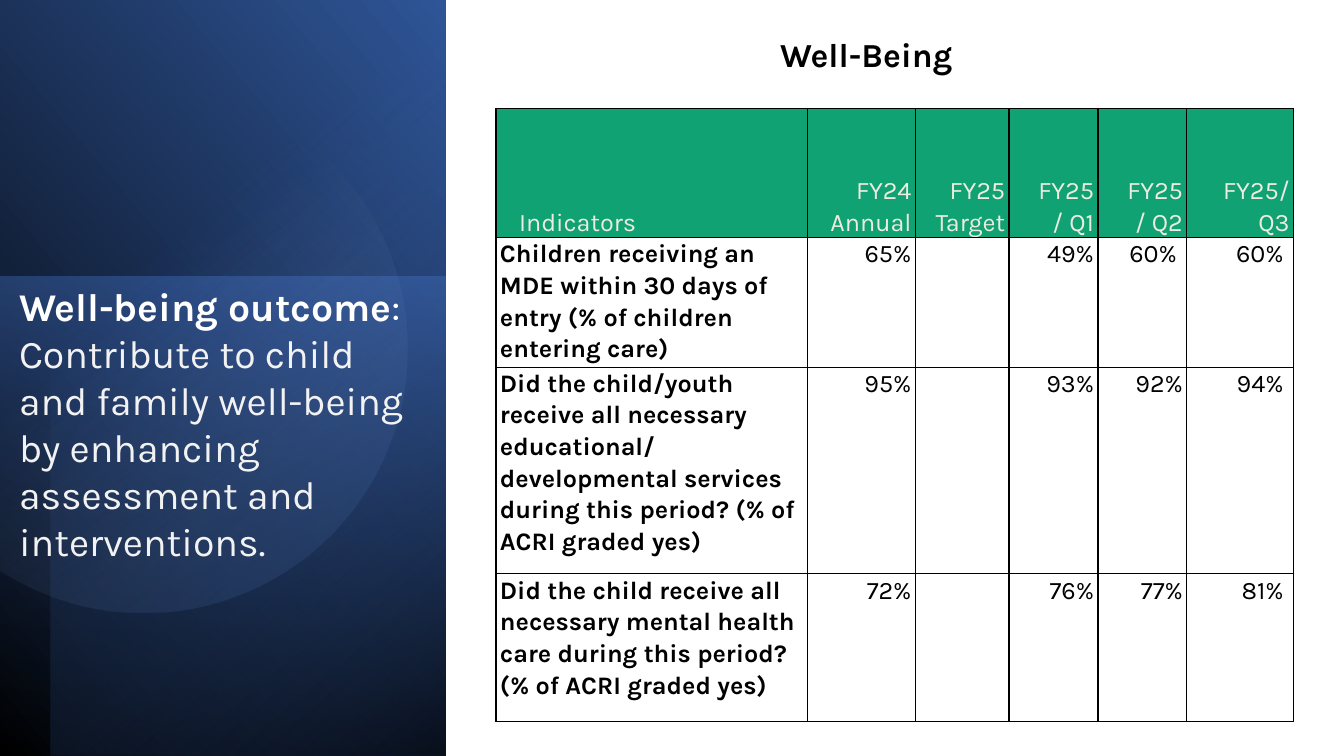
import math

import lxml.etree
import pptx
import pptx.dml.color
import pptx.enum.shapes
import pptx.enum.text
import pptx.oxml
import pptx.oxml.ns
import pptx.util

Cm = pptx.util.Cm
Pt = pptx.util.Pt
RGBColor = pptx.dml.color.RGBColor
Align = pptx.enum.text.PP_ALIGN
Anchor = pptx.enum.text.MSO_ANCHOR
qn = pptx.oxml.ns.qn

BLACK = RGBColor(0x00, 0x00, 0x00)
WHITE = RGBColor(0xFF, 0xFF, 0xFF)
OFF_WHITE = RGBColor(0xF2, 0xF2, 0xF2)
CREAM = RGBColor(0xEE, 0xEC, 0xE1)
GREEN = RGBColor(0x11, 0xA2, 0x74)
BLUE = RGBColor(0x44, 0x72, 0xC4)
DEEP_BLUE = RGBColor(0x2F, 0x55, 0x97)
NAVY = RGBColor(0x20, 0x38, 0x64)
PALE_BLUE = RGBColor(0x8F, 0xAA, 0xDC)
FONT = "Karla"

COLUMN_WIDTHS = (7.85, 2.72, 2.36, 2.24, 2.24, 2.69)
ROW_HEIGHTS = (3.25, 2.84, 5.21, 3.71)
HEADERS = ("Indicators", "FY24 Annual", "FY25 Target", "FY25/ Q1", "FY25/ Q2", "FY25/Q3")
INDICATORS = (
    ("Children receiving an MDE within 30 days of entry (% of children entering care)",
     "65%", "", "49%", "60% ", "60% "),
    ("Did the child/youth receive all necessary educational/ developmental services "
     "during this period? (% of ACRI graded yes)",
     "95%", "", "93%", "92%", "94% "),
    ("Did the child receive all necessary mental health care during this period? "
     "(% of ACRI graded yes)",
     "72%", "", "76%", "77%", "81% "),
)


def set_gradient(shape, stops, angle):
    shape.shadow.inherit = False
    shape.line.fill.background()
    shape.fill.gradient()
    gradient = shape.fill._xPr.find(qn("a:gradFill"))
    gradient.set("rotWithShape", "1")
    for child in list(gradient):
        gradient.remove(child)
    stop_list = lxml.etree.SubElement(gradient, qn("a:gsLst"))
    for position, color, opacity in stops:
        stop = lxml.etree.SubElement(stop_list, qn("a:gs"), pos=str(position * 1000))
        value = lxml.etree.SubElement(stop, qn("a:srgbClr"), val=str(color))
        if opacity < 100:
            lxml.etree.SubElement(value, qn("a:alpha"), val=str(opacity * 1000))
    lxml.etree.SubElement(gradient, qn("a:lin"), ang=str(round(angle * 60000)), scaled="0")


def add_turned_rectangle(slide, box, rotation, flipped, stops, angle):
    left, top, width, height = box
    shift = (width - height) / 2
    rectangle = slide.shapes.add_shape(
        pptx.enum.shapes.MSO_SHAPE.RECTANGLE,
        Cm(left + shift), Cm(top - shift), Cm(height), Cm(width))
    rectangle.rotation = rotation
    if flipped:
        rectangle._element.spPr.find(qn("a:xfrm")).set("flipH", "1")
    set_gradient(rectangle, stops, angle)


def add_cut_circle(slide, left, center_x, center_y, radius, stops, angle):
    limit = math.acos((left - center_x) / radius)
    steps = 120
    turns = [limit * (2 * step / steps - 1) for step in range(steps + 1)]
    points = [(Cm(center_x + radius * math.cos(turn)), Cm(center_y + radius * math.sin(turn)))
              for turn in turns]
    builder = slide.shapes.build_freeform(*points[0])
    builder.add_line_segments(points[1:], close=True)
    set_gradient(builder.convert_to_shape(), stops, angle)


def add_text_box(slide, left, top, width, height, size):
    frame = slide.shapes.add_textbox(Cm(left), Cm(top), Cm(width), Cm(height)).text_frame
    frame.word_wrap = True
    paragraph = frame.paragraphs[0]
    paragraph.font.name = FONT
    paragraph.font.size = Pt(size)
    return paragraph


def add_outcome_panel(slide, left, top, width, height):
    add_turned_rectangle(slide, (left, top, width, height), 90, True,
                         ((0, BLACK, 100), (100, DEEP_BLUE, 100)), 310)
    add_turned_rectangle(slide, (left, top + 6.96, width, height - 6.96), 270, False,
                         ((0, BLUE, 50), (100, NAVY, 0)), 190)
    add_turned_rectangle(slide, (left + 1.27, top, width - 1.27, height), 270, True,
                         ((0, BLACK, 59), (69, BLUE, 0)), 220)
    add_cut_circle(slide, left, left + 3.63, top + 8.79, 6.65,
                   ((39, PALE_BLUE, 0), (100, DEEP_BLUE, 26)), 51.6)
    paragraph = add_text_box(slide, left + 0.23, top + 6.99, width - 1.04, 7.44, 28)
    for text, color, bold in (("Well-being outcome", WHITE, True), (":", WHITE, False)):
        run = paragraph.add_run()
        run.text = text
        run.font.color.rgb = color
        run.font.bold = bold
    paragraph.add_line_break()
    run = paragraph.add_run()
    run.text = "Contribute to child and family well-being by enhancing assessment and interventions."
    run.font.color.rgb = OFF_WHITE


def add_title(slide, left, top, width, height):
    paragraph = add_text_box(slide, left, top, width, height, 24)
    paragraph.text = "Well-Being"
    paragraph.font.bold = True
    paragraph.font.color.rgb = BLACK


def add_borders(cell):
    properties = cell._tc.get_or_add_tcPr()
    for side in ("a:lnL", "a:lnR", "a:lnT", "a:lnB"):
        border = lxml.etree.SubElement(properties, qn(side), w=str(Pt(1)))
        fill = lxml.etree.SubElement(border, qn("a:solidFill"))
        lxml.etree.SubElement(fill, qn("a:srgbClr"), val=str(BLACK))


def fill_cell(cell, text, is_header, is_label):
    add_borders(cell)
    cell.margin_left = cell.margin_right = Cm(0.1)
    cell.margin_top = cell.margin_bottom = 0
    paragraph = cell.text_frame.paragraphs[0]
    paragraph.text = text
    paragraph.line_spacing = 1.07
    paragraph.alignment = Align.LEFT if is_label else Align.RIGHT
    if is_header or not is_label:
        paragraph._p.get_or_add_pPr().set("indent", str(Cm(0.48 if is_label else 0.45)))
    paragraph.font.name = FONT
    paragraph.font.size = Pt(18)
    paragraph.font.bold = is_label and not is_header
    paragraph.font.color.rgb = CREAM if is_header else BLACK
    if is_header:
        cell.vertical_anchor = Anchor.BOTTOM
        cell.fill.solid()
        cell.fill.fore_color.rgb = GREEN
    else:
        paragraph.space_after = Pt(7.2)
        cell.fill.background()


def add_indicator_table(slide, left, top):
    rows = (HEADERS,) + INDICATORS
    table = slide.shapes.add_table(
        len(rows), len(HEADERS), Cm(left), Cm(top),
        Cm(sum(COLUMN_WIDTHS)), Cm(sum(ROW_HEIGHTS))).table
    table.horz_banding = False
    table.first_row = False
    for column, width in zip(table.columns, COLUMN_WIDTHS):
        column.width = Cm(width)
    for row, height in zip(table.rows, ROW_HEIGHTS):
        row.height = Cm(height)
    for row_index, texts in enumerate(rows):
        for column_index, text in enumerate(texts):
            fill_cell(table.cell(row_index, column_index), text,
                      row_index == 0, column_index == 0)


def main():
    presentation = pptx.Presentation()
    presentation.slide_width = Cm(33.87)
    presentation.slide_height = Cm(19.05)
    slide = presentation.slides.add_slide(presentation.slide_layouts[6])
    add_outcome_panel(slide, 0, 0, 11.23, 19.05)
    add_title(slide, 19.41, 0.74, 6.27, 1.27)
    add_indicator_table(slide, 12.5, 2.74)
    presentation.save("out.pptx")


if __name__ == "__main__":
    main()
